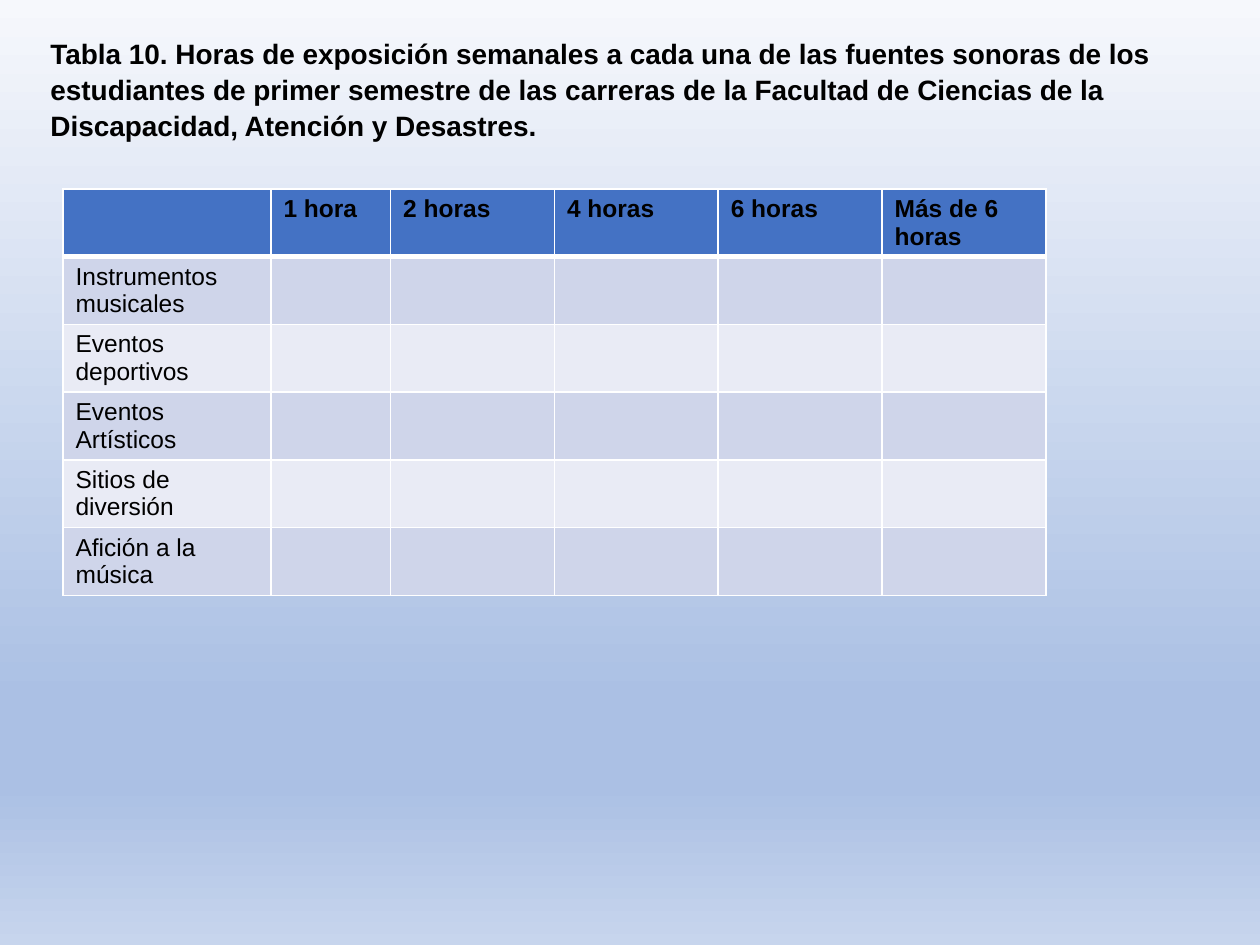
import copy

import pptx
import pptx.dml.color
import pptx.enum.text
import pptx.oxml
import pptx.oxml.ns
import pptx.util

BLACK = pptx.dml.color.RGBColor(0x00, 0x00, 0x00)
WHITE = pptx.dml.color.RGBColor(0xFF, 0xFF, 0xFF)
HEADER_BLUE = pptx.dml.color.RGBColor(0x44, 0x72, 0xC4)
BAND_DARK = pptx.dml.color.RGBColor(0xCF, 0xD5, 0xEA)
BAND_LIGHT = pptx.dml.color.RGBColor(0xE9, 0xEB, 0xF5)
SKY_TOP = pptx.dml.color.RGBColor(0xF6, 0xF8, 0xFC)
SKY_DEEP = pptx.dml.color.RGBColor(0xAB, 0xC0, 0xE4)
SKY_BOTTOM = pptx.dml.color.RGBColor(0xC7, 0xD5, 0xED)

BACKGROUND_STOPS = [(0, SKY_TOP), (0.74, SKY_DEEP), (0.83, SKY_DEEP), (1, SKY_BOTTOM)]
TITLE = (
    "Tabla 10. Horas de exposición semanales a cada una de las fuentes sonoras "
    "de los estudiantes de primer semestre de las carreras de la Facultad de "
    "Ciencias de la Discapacidad, Atención y Desastres."
)
HOURS = ["", "1 hora", "2 horas", "4 horas", "6 horas", "Más de 6 horas"]
SOUND_SOURCES = [
    "Instrumentos musicales",
    "Eventos deportivos",
    "Eventos Artísticos",
    "Sitios de diversión",
    "Afición a la música",
]
COLUMN_WIDTHS = [1.65, 0.95] + [1.3] * 4
ROW_HEIGHT = 0.41


class SlideBuilder:
    font_name = "Arial"

    def __init__(self, presentation):
        self.width = presentation.slide_width
        self.height = presentation.slide_height
        self.slide = presentation.slides.add_slide(presentation.slide_layouts[5])

    def box(self, left, top, width, height):
        return (
            round(left * self.width),
            round(top * self.height),
            round(width * self.width),
            round(height * self.height),
        )

    def apply(self, target, values):
        for name, value in values.items():
            setattr(target, name, value)

    def format_font(self, paragraph, size, bold):
        self.apply(paragraph.font, {
            "name": self.font_name, "size": pptx.util.Pt(size), "bold": bold,
        })
        paragraph.font.color.rgb = BLACK

    def background(self, stops):
        fill = self.slide.background.fill
        fill.gradient()
        fill.gradient_angle = 270
        stop_list = self.slide.element.xpath(".//a:gsLst")[0]
        while len(stop_list) < len(stops):
            stop_list.append(copy.deepcopy(stop_list[0]))
        for stop, (position, color) in zip(fill.gradient_stops, stops):
            stop.position = position
            stop.color.rgb = color

    def title(self, text, box):
        shape = self.slide.shapes.title
        self.apply(shape, dict(zip(("left", "top", "width", "height"), self.box(*box))))
        frame = shape.text_frame
        frame.text = text
        self.apply(frame, {
            "word_wrap": True,
            "auto_size": pptx.enum.text.MSO_AUTO_SIZE.NONE,
            "vertical_anchor": pptx.enum.text.MSO_ANCHOR.TOP,
        })
        paragraph = frame.paragraphs[0]
        self.apply(paragraph, {
            "alignment": pptx.enum.text.PP_ALIGN.LEFT, "line_spacing": 1.07,
        })
        self.format_font(paragraph, 16, True)

    def border(self, cell, side, points):
        properties = cell._tc.get_or_add_tcPr()
        properties.append(pptx.oxml.parse_xml(
            f'<a:ln{side} {pptx.oxml.ns.nsdecls("a")} w="{pptx.util.Pt(points)}">'
            f'<a:solidFill><a:srgbClr val="{WHITE}"/></a:solidFill></a:ln{side}>'
        ))

    def cell(self, cell, text, row):
        widths = {"L": 1, "R": 1, "T": 3 if row == 1 else 1, "B": 3 if row == 0 else 1}
        for side, points in widths.items():
            self.border(cell, side, points)
        cell.fill.solid()
        band = BAND_DARK if row % 2 else BAND_LIGHT
        cell.fill.fore_color.rgb = band if row else HEADER_BLUE
        cell.text = text
        self.format_font(cell.text_frame.paragraphs[0], 14, row == 0)

    def table(self, rows, column_widths, row_height, box):
        shape = self.slide.shapes.add_table(len(rows), len(column_widths), *self.box(*box))
        table = shape.table
        for column, width in zip(table.columns, column_widths):
            column.width = pptx.util.Inches(width)
        for row_index, texts in enumerate(rows):
            table.rows[row_index].height = pptx.util.Inches(row_height)
            for column_index, text in enumerate(texts):
                self.cell(table.cell(row_index, column_index), text, row_index)
        shape.height = self.box(*box)[3]


def main():
    presentation = pptx.Presentation()
    presentation.slide_width = pptx.util.Inches(10)
    presentation.slide_height = pptx.util.Inches(7.5)
    builder = SlideBuilder(presentation)
    builder.background(BACKGROUND_STOPS)
    builder.title(TITLE, (0.03, 0.03, 0.94, 0.23))
    rows = [HOURS] + [[source] + [""] * (len(HOURS) - 1) for source in SOUND_SOURCES]
    builder.table(rows, COLUMN_WIDTHS, ROW_HEIGHT, (0.05, 0.2, 0.78, 0.45))
    presentation.save("out.pptx")


if __name__ == "__main__":
    main()
